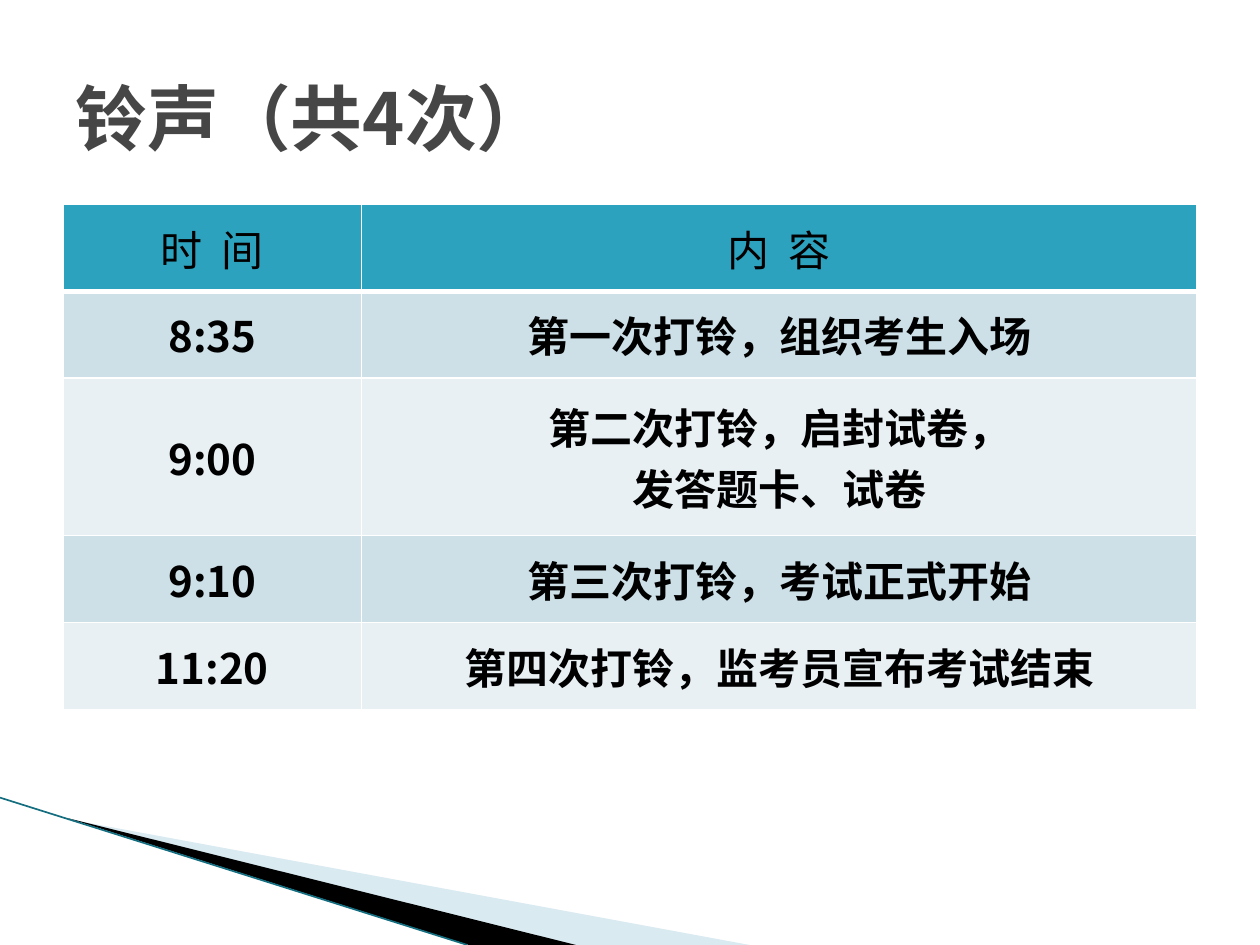
from lxml.etree import SubElement
from pptx import Presentation
from pptx.dml.color import RGBColor
from pptx.enum.shapes import MSO_CONNECTOR
from pptx.enum.text import MSO_ANCHOR, PP_ALIGN
from pptx.oxml import parse_xml
from pptx.oxml.ns import nsdecls, qn
from pptx.util import Cm, Pt

FONT = "Noto Sans CJK SC"
BLACK = RGBColor(0x00, 0x00, 0x00)
WHITE = RGBColor(0xFF, 0xFF, 0xFF)
GREY = RGBColor(0x46, 0x46, 0x46)
HEADER = RGBColor(0x2D, 0xA2, 0xBF)
BAND_DARK = RGBColor(0xCD, 0xE0, 0xE8)
BAND_LIGHT = RGBColor(0xE8, 0xF0, 0xF4)
WEDGE = RGBColor(0xA0, 0xCB, 0xDC)
EDGE = RGBColor(0x14, 0x6E, 0x80)

COLUMNS = [6.02, 16.84]
ROW_HEIGHTS = [1.75, 1.75, 3.18, 1.75, 1.75]
BELLS = [
    ("时  间", "内  容"),
    ("8:35", "第一次打铃，组织考生入场"),
    ("9:00", "第二次打铃，启封试卷，\n发答题卡、试卷"),
    ("9:10", "第三次打铃，考试正式开始"),
    ("11:20", "第四次打铃，监考员宣布考试结束"),
]


def format_run(r, size, color, bold):
    r.font.name = FONT
    r.font.size = Pt(size)
    r.font.bold = bold
    r.font.color.rgb = color
    SubElement(r.font._element, qn("a:ea"), typeface=FONT)


def add_title(s, left, top, width, height):
    title = s.shapes.title
    title.left, title.top = Cm(left), Cm(top)
    title.width, title.height = Cm(width), Cm(height)
    tf = title.text_frame
    tf.text = "铃声（共4次）"
    tf.vertical_anchor = MSO_ANCHOR.MIDDLE
    p = tf.paragraphs[0]
    p.alignment = PP_ALIGN.LEFT
    format_run(p.runs[0], 41, GREY, True)


def set_borders(cell, widths):
    tc_pr = cell._tc.get_or_add_tcPr()
    for i, (side, width) in enumerate(widths.items()):
        tc_pr.insert(i, parse_xml(
            f'<a:ln{side} {nsdecls("a")} w="{Pt(width)}"><a:solidFill>'
            f'<a:srgbClr val="{WHITE}"/></a:solidFill></a:ln{side}>'))


def fill_cell(cell, text, row):
    cell.fill.solid()
    cell.fill.fore_color.rgb = HEADER if row == 0 else BAND_DARK if row % 2 else BAND_LIGHT
    set_borders(cell, {"L": 1, "R": 1, "T": 3 if row == 1 else 1, "B": 3 if row == 0 else 1})
    cell.vertical_anchor = MSO_ANCHOR.MIDDLE
    cell.text_frame.text = text
    for p in cell.text_frame.paragraphs:
        p.alignment = PP_ALIGN.CENTER
        p_pr = p._p.get_or_add_pPr()
        p_pr.set("marL", str(Cm(1.3)))
        p_pr.set("indent", str(-Cm(1.3)))
        format_run(p.runs[0], 24, BLACK, row > 0)


def add_bell_table(s, left, top):
    table = s.shapes.add_table(
        len(BELLS), len(COLUMNS), Cm(left), Cm(top),
        Cm(sum(COLUMNS)), Cm(sum(ROW_HEIGHTS))).table
    for column, width in zip(table.columns, COLUMNS):
        column.width = Cm(width)
    for row, (height, texts) in enumerate(zip(ROW_HEIGHTS, BELLS)):
        table.rows[row].height = Cm(height)
        for col, text in enumerate(texts):
            fill_cell(table.cell(row, col), text, row)


def add_wedge(s, left, top, points, color):
    start, *rest = [(Cm(left + x), Cm(top + y)) for x, y in points]
    builder = s.shapes.build_freeform(*start)
    builder.add_line_segments(rest, close=True)
    sp = builder.convert_to_shape()
    sp.shadow.inherit = False
    sp.fill.solid()
    sp.fill.fore_color.rgb = color
    sp.line.fill.background()
    return sp


def add_corner(s, left, top, height):
    light = add_wedge(s, left, top, [(1.4, 0.44), (15.11, height), (11.58, height)], WEDGE)
    color = light._element.spPr.find(qn("a:solidFill"))[0]
    SubElement(color, qn("a:alpha"), val="40000")
    add_wedge(s, left, top, [(1.35, 0.41), (11.61, height), (9.45, height)], BLACK)
    line = s.shapes.add_connector(
        MSO_CONNECTOR.STRAIGHT, Cm(left), Cm(top), Cm(left + 9.42), Cm(top + height))
    line.line.color.rgb = EDGE
    line.line.width = Pt(0.95)
    SubElement(line._element.spPr, qn("a:effectLst"))


def main():
    prs = Presentation()
    prs.slide_width, prs.slide_height = Cm(25.4), Cm(19.05)
    s = prs.slides.add_slide(prs.slide_layouts[5])
    add_corner(s, 0, 16.08, 2.97)
    add_bell_table(s, 1.27, 4.12)
    add_title(s, 1.27, 0.76, 22.86, 3.18)
    prs.save("out.pptx")


if __name__ == "__main__":
    main()
